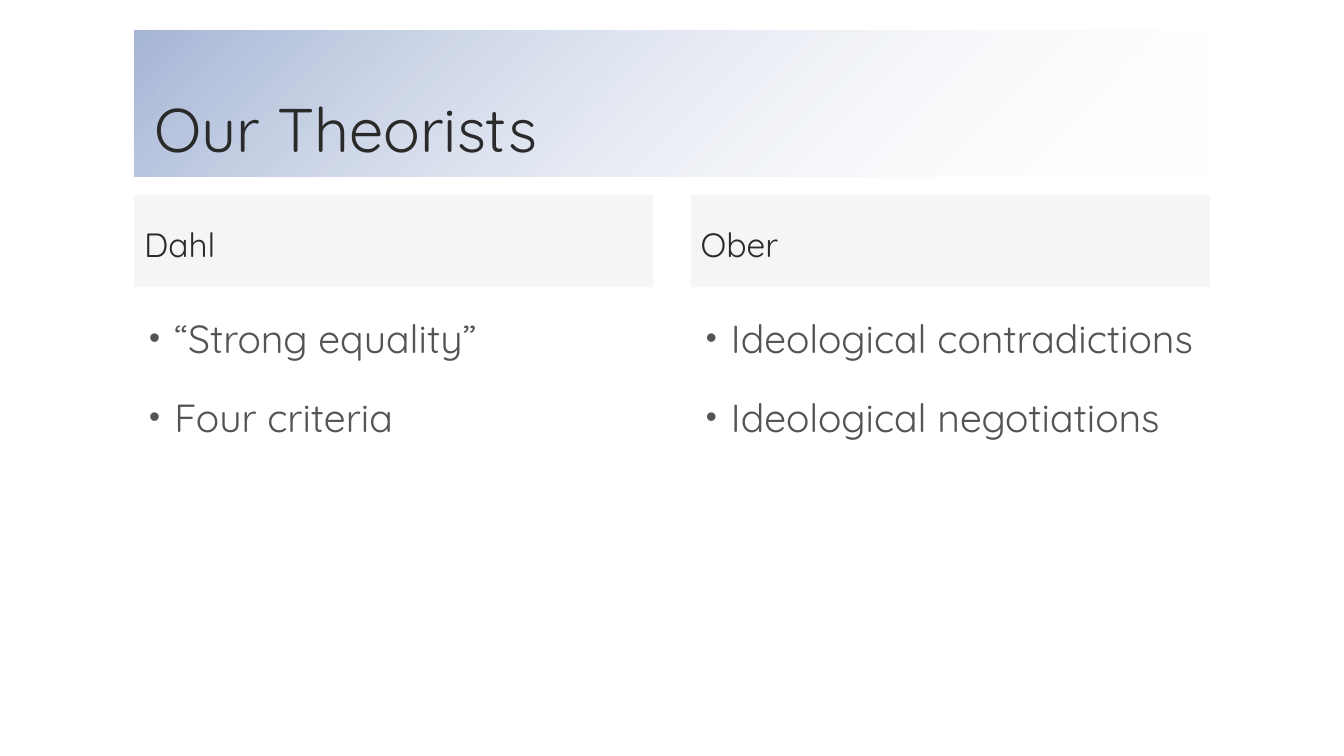
import pptx
import pptx.dml.color
import pptx.enum.text
import pptx.oxml
import pptx.oxml.ns
import pptx.util

Inches = pptx.util.Inches
Anchor = pptx.enum.text.MSO_ANCHOR

FONT = "Quicksand"
DARK, GREY = "2A2A2A", "545454"
LEFT, COLUMN_WIDTH, COLUMN_STEP = 1.33, 5.15, 5.52
COLUMNS = [
    ("Dahl", ["“Strong equality”", "Four criteria"]),
    ("Ober", ["Ideological contradictions", "Ideological negotiations"]),
]


def color(value):
    return pptx.dml.color.RGBColor.from_string(value)


def add_xml(parent, tag, attributes="", children=""):
    namespace = pptx.oxml.ns.nsdecls("a")
    xml = f"<a:{tag} {namespace} {attributes}>{children}</a:{tag}>"
    parent.append(pptx.oxml.parse_xml(xml))


def set_last_alpha(box, percent):
    """Set the opacity of the last colour in the box's fill."""
    last_color = box._element.spPr.xpath(".//a:srgbClr")[-1]
    add_xml(last_color, "alpha", f'val="{percent * 1000}"')


def place(box, left, top, width, height):
    box.left, box.top = Inches(left), Inches(top)
    box.width, box.height = Inches(width), Inches(height)


def write(box, lines, size, text_color, anchor, line_spacing, space_before=0):
    frame = box.text_frame
    frame.text = "\n".join(lines)
    frame.word_wrap = True
    frame.auto_size = pptx.enum.text.MSO_AUTO_SIZE.NONE
    frame.vertical_anchor = anchor
    for para in frame.paragraphs:
        para.alignment = pptx.enum.text.PP_ALIGN.LEFT
        para.line_spacing = line_spacing
        para.space_before = pptx.util.Pt(space_before)
        for span in para.runs:
            span.font.name = FONT
            span.font.size = pptx.util.Pt(size)
            span.font.bold = False
            span.font.color.rgb = color(text_color)


def format_title(box, text):
    place(box, LEFT, 0.3, COLUMN_STEP + COLUMN_WIDTH, 1.45)
    write(box, [text], 44, DARK, Anchor.BOTTOM, 0.9)
    frame = box.text_frame
    frame.margin_left = frame.margin_right = Inches(0.2)
    frame.margin_top = frame.margin_bottom = Inches(0.1)
    # Diagonal fade from blue to transparent white
    box.fill.gradient()
    box.fill.gradient_angle = 315
    for stop, value, position in zip(box.fill.gradient_stops, ("A6B6D6", "FFFFFF"), (0, 1)):
        stop.color.rgb = color(value)
        stop.position = position
    set_last_alpha(box, 0)


def format_heading(box, text, left):
    place(box, left, 1.93, COLUMN_WIDTH, 0.92)
    write(box, [text], 24, DARK, Anchor.MIDDLE, 1.14)
    box.fill.solid()
    box.fill.fore_color.rgb = color("BFBFBF")
    set_last_alpha(box, 15)


def format_list(box, items, left):
    place(box, left, 3, COLUMN_WIDTH, 3.58)
    write(box, items, 28, GREY, Anchor.TOP, 1.14, space_before=18)
    for para in box.text_frame.paragraphs:
        properties = para._p.get_or_add_pPr()
        properties.set("marL", str(Inches(0.3)))
        properties.set("indent", str(Inches(-0.25)))
        add_xml(properties, "buClr", children=f'<a:srgbClr val="{GREY}"/>')
        add_xml(properties, "buSzPct", 'val="80000"')
        add_xml(properties, "buFont", 'typeface="Arial"')
        add_xml(properties, "buChar", 'char="•"')


def main():
    deck = pptx.Presentation()
    deck.slide_width, deck.slide_height = Inches(13.33), Inches(7.5)

    # The comparison layout has a title and two headed lists
    page = deck.slides.add_slide(deck.slide_layouts.get_by_name("Comparison"))
    page.background.fill.solid()
    page.background.fill.fore_color.rgb = color("FFFFFF")
    title, *boxes = page.placeholders
    format_title(title, "Our Theorists")

    # Columns: a heading above its list
    for index, (heading, items) in enumerate(COLUMNS):
        left = LEFT + index * COLUMN_STEP
        format_heading(boxes[2 * index], heading, left)
        format_list(boxes[2 * index + 1], items, left)

    deck.save("out.pptx")


if __name__ == "__main__":
    main()
